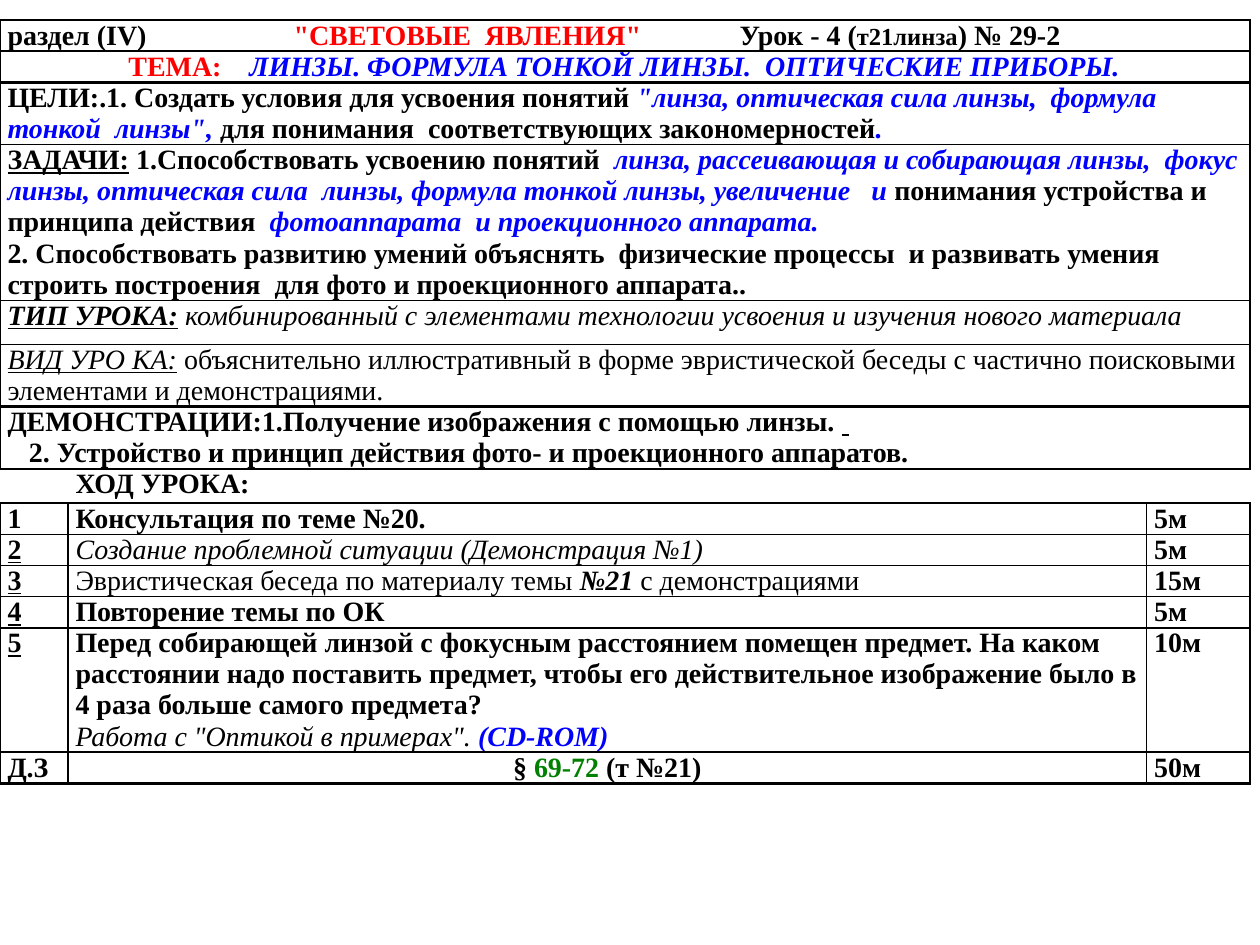
from lxml.etree import SubElement
from pptx import Presentation
from pptx.dml.color import RGBColor
from pptx.oxml.ns import qn
from pptx.util import Inches, Pt

FONT, SIZE = "Times New Roman", 16
BLACK, RED, BLUE, GREEN = "000000", "FF0000", "0000FF", "008000"
THIN, THICK = 1, 1.5

# Run styles: bold, italic, underline, colour, size
PLAIN = {"bold": False, "italic": False, "underline": False, "color": BLACK, "size": SIZE}
ITALIC = PLAIN | {"italic": True}
BOLD = PLAIN | {"bold": True}
SMALL = BOLD | {"size": 14}
HEADING = BOLD | {"color": RED}
TERM = BOLD | {"italic": True, "color": BLUE}
LABEL = BOLD | {"underline": True}
BOLD_ITALIC = BOLD | {"italic": True}
ITALIC_LABEL = ITALIC | {"underline": True}
HOMEWORK = BOLD | {"color": GREEN}


def line(*runs, **layout):
    """One paragraph; layout may hold align, indent or tabs (inches)."""
    return runs, layout


def bold(text):
    return [line((text, BOLD))]


def label(text):
    return [line((text, LABEL))]


# Each entry: row height, paragraphs of each cell (one cell spans the whole row)
ROWS = [
    (0.17, [[line(("раздел (IV)\t", BOLD), ("\"СВЕТОВЫЕ  ЯВЛЕНИЯ\"\t", HEADING),
                  ("Урок - 4 (", BOLD), ("т21линза", SMALL), (") № 29-2", BOLD),
                  tabs=(2.27, 5.81))]]),
    (0.17, [[line(("\tТЕМА:\t", HEADING),
                  ("ЛИНЗЫ. ФОРМУЛА ТОНКОЙ ЛИНЗЫ.  ОПТИЧЕСКИЕ ПРИБОРЫ.", TERM),
                  tabs=(0.96, 1.92))]]),
    (0.35, [[line(("ЦЕЛИ:.1. Создать условия для усвоения понятий ", BOLD),
                  ("\"линза, оптическая сила линзы,  формула тонкой  линзы\", ", TERM),
                  ("для понимания  соответствующих закономерностей", BOLD), (".", TERM))]]),
    (1.04, [[line(("ЗАДАЧИ:", LABEL), (" 1.Способствовать усвоению понятий ", BOLD),
                  (" линза, рассеивающая и собирающая линзы,  фокус линзы, оптическая сила  "
                   "линзы, формула тонкой линзы, увеличение   и ", TERM),
                  ("понимания устройства и принципа действия  ", BOLD),
                  ("фотоаппарата  и проекционного аппарата.", TERM)),
             line(("2. Способствовать развитию умений объяснять  физические процессы  и развивать "
                   "умения строить построения  для фото и проекционного аппарата..", BOLD))]]),
    (0.35, [[line(("ТИП УРОКА:", BOLD_ITALIC | LABEL | {"italic": True}),
                  (" комбинированный с элементами технологии усвоения и изучения нового материала",
                   ITALIC))]]),
    (0.35, [[line(("ВИД УРО КА:", ITALIC_LABEL),
                  (" объяснительно иллюстративный в форме эвристической беседы с частично "
                   "поисковыми элементами и демонстрациями.", PLAIN))]]),
    (0.35, [[line(("ДЕМОНСТРАЦИИ:1.Получение изображения с помощью линзы. ", BOLD),
                  (" ", LABEL)),
             line(("2. Устройство и принцип действия фото- и проекционного аппаратов.", BOLD),
                  indent=0.17)]]),
    (0.17, [[line()], bold("ХОД УРОКА:"), [line()]]),
    (0.17, [bold("1"), bold("Консультация по теме №20."), bold("5м")]),
    (0.17, [label("2"), [line(("Создание проблемной ситуации (Демонстрация №1)", ITALIC))],
            bold("5м")]),
    (0.17, [label("3"), [line(("Эвристическая беседа по материалу темы ", PLAIN),
                              ("№21", BOLD_ITALIC), (" с демонстрациями", PLAIN))],
            bold("15м")]),
    (0.17, [label("4"), bold("Повторение темы по ОК"), bold("5м")]),
    (0.63, [label("5"),
            [line(("Перед собирающей линзой с фокусным расстоянием помещен предмет. На каком "
                   "расстоянии надо поставить предмет, чтобы его действительное изображение было "
                   "в 4 раза больше самого предмета?", BOLD)),
             line(("Работа с \"Оптикой в примерах\". ", ITALIC), ("(CD-ROM)", TERM))],
            bold("10м")]),
    (0.17, [bold("Д.З"),
            [line(("§ ", BOLD), ("69-72", HOMEWORK), (" (т №21)", BOLD), align="ctr")],
            bold("50м")]),
]
COLUMNS = [0.54, 8.56, 0.82]

# Rules: one width per horizontal edge, four vertical edges per row
HORIZONTAL = [THIN, THICK, THICK, THIN, THIN, THIN, THICK, THICK,
              THICK, THIN, THIN, THIN, THICK, THICK, THICK]
FRAME = (THIN, 0, 0, THIN)
THICK_FRAME = (THICK, 0, 0, THICK)
STEPS = (THICK, THICK, THIN, THIN)
LAST_STEPS = (THICK, THIN, THIN, THICK)
VERTICAL = [FRAME, THICK_FRAME, *[FRAME] * 4, THICK_FRAME, (0, 0, 0, 0),
            *[STEPS] * 3, *[LAST_STEPS] * 3]


def rgb(value):
    return RGBColor.from_string(value)


def add_borders(cell, left, right, top, bottom):
    properties = cell._tc.get_or_add_tcPr()
    for side, width in zip("LRTB", (left, right, top, bottom)):
        border = SubElement(properties, qn(f"a:ln{side}"), w=str(Pt(width)))
        if width:
            fill = SubElement(border, qn("a:solidFill"))
            SubElement(fill, qn("a:srgbClr"), val=BLACK)
        else:
            SubElement(border, qn("a:noFill"))


def write_paragraph(paragraph, runs, layout):
    properties = paragraph._p.get_or_add_pPr()
    if "align" in layout:
        properties.set("algn", layout["align"])
    if "indent" in layout:
        properties.set("marL", str(Inches(layout["indent"])))
    if "tabs" in layout:
        tab_list = SubElement(properties, qn("a:tabLst"))
        for position in layout["tabs"]:
            SubElement(tab_list, qn("a:tab"), pos=str(Inches(position)), algn="l")
    for text, style in runs:
        run = paragraph.add_run()
        run.text = text
        run.font.name = FONT
        run.font.size = Pt(style["size"])
        run.font.color.rgb = rgb(style["color"])
        for name in ("bold", "italic", "underline"):
            setattr(run.font, name, style[name])
    if not runs:
        SubElement(paragraph._p, qn("a:endParaRPr"), sz=str(SIZE * 100))


def write_cell(cell, paragraphs):
    frame = cell.text_frame
    for index, (runs, layout) in enumerate(paragraphs):
        paragraph = frame.add_paragraph() if index else frame.paragraphs[0]
        write_paragraph(paragraph, runs, layout)


def main():
    presentation = Presentation()
    presentation.slide_width, presentation.slide_height = Inches(10), Inches(7.5)
    slide = presentation.slides.add_slide(presentation.slide_layouts[6])
    shape = slide.shapes.add_table(len(ROWS), len(COLUMNS), 0, Inches(0.16),
                                   Inches(sum(COLUMNS)), Inches(6.48))
    table = shape.table
    table.first_row = table.horz_banding = False
    for column, width in zip(table.columns, COLUMNS):
        column.width = Inches(width)

    for r, (height, cells) in enumerate(ROWS):
        table.rows[r].height = Inches(height)
        spans_row = len(cells) == 1
        for c in range(len(COLUMNS)):
            cell = table.cell(r, c)
            cell.margin_left = cell.margin_right = Inches(0.06)
            cell.margin_top = cell.margin_bottom = 0
            right = VERTICAL[r][-1 if spans_row else c + 1]
            add_borders(cell, VERTICAL[r][c], right, HORIZONTAL[r], HORIZONTAL[r + 1])
            cell.fill.background()
            write_cell(cell, cells[c] if c < len(cells) else [line()])
        if spans_row:
            table.cell(r, 0).merge(table.cell(r, len(COLUMNS) - 1))
    shape.height = Inches(6.48)
    presentation.save("out.pptx")


if __name__ == "__main__":
    main()
